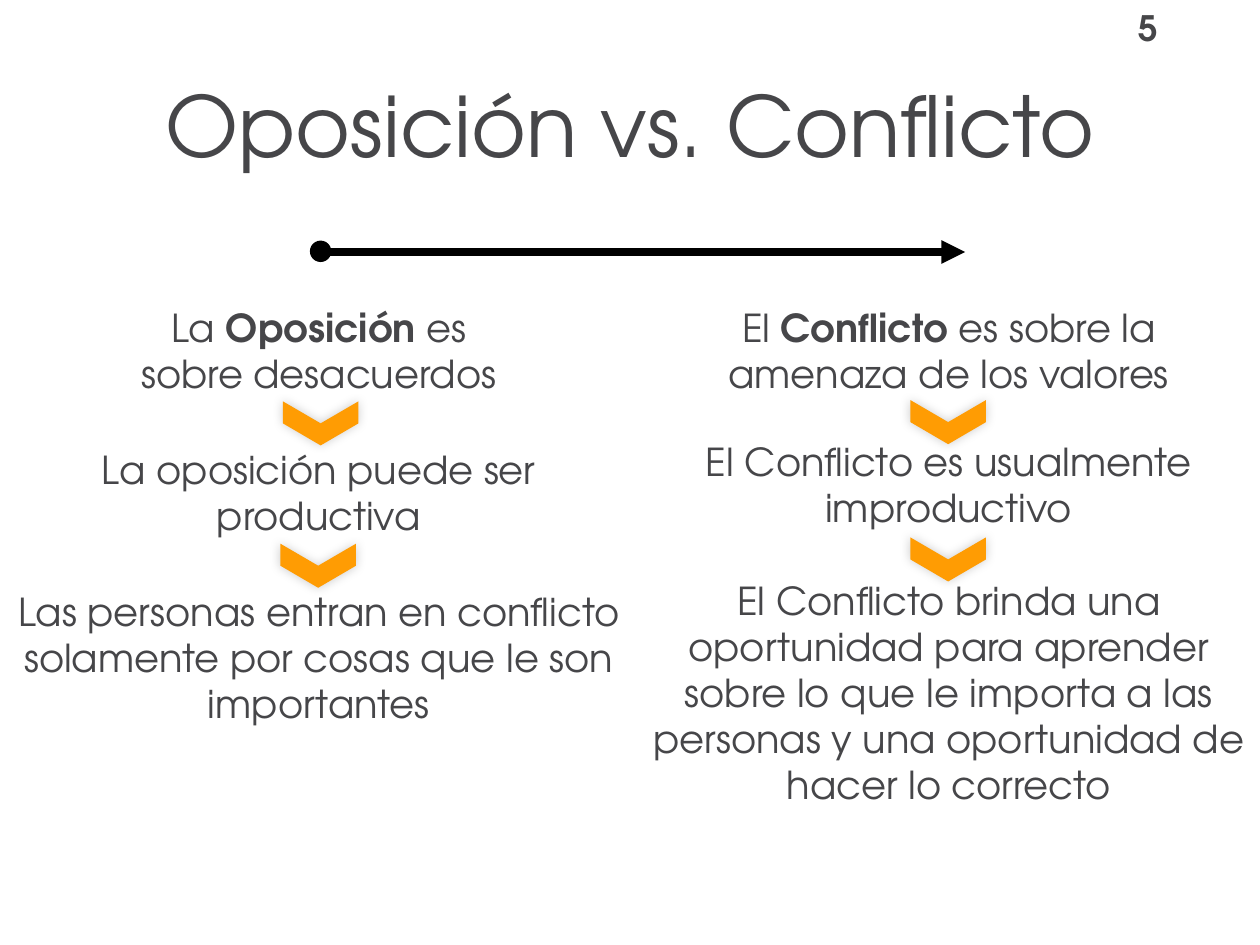
from lxml import etree
from pptx import Presentation
from pptx import util as u
from pptx.dml.color import RGBColor
from pptx.enum import shapes, text
from pptx.oxml import parse_xml
from pptx.oxml.ns import nsdecls, qn

PX = 9144  # 100 px to the inch
FONT = "TeX Gyre Adventor"
GREY = RGBColor(0x46, 0x46, 0x49)
BLACK = RGBColor(0, 0, 0)
ORANGE = RGBColor(0xFF, 0x9C, 0x03)
CENTER = text.PP_ALIGN.CENTER


def write(paragraph, content, size=22, bold=False, align=None, before=0, after=0):
    """Fill a paragraph; ** toggles bold and a newline breaks the line."""
    paragraph.alignment = align
    paragraph.space_before, paragraph.space_after = u.Pt(before), u.Pt(after)
    for index, part in enumerate(content.split("**")):
        for row, words in enumerate(part.split("\n")):
            if row:
                paragraph.add_line_break()
            run = paragraph.add_run()
            run.text = words
            run.font.name, run.font.size = FONT, u.Pt(size)
            run.font.bold = bold or index % 2 == 1
            run.font.color.rgb = GREY


class Deck:
    def __init__(self, width, height):
        self.presentation = Presentation()
        self.presentation.slide_width = width * PX
        self.presentation.slide_height = height * PX
        self.slide = self.presentation.slides.add_slide(self.presentation.slide_layouts[3])

    def place(self, shape, left, top, width, height):
        shape.left, shape.top = left * PX, top * PX
        shape.width, shape.height = width * PX, height * PX

    def title(self, content, *box):
        shape = self.slide.shapes.title
        self.place(shape, *box)
        shape.text_frame.auto_size = text.MSO_AUTO_SIZE.NONE
        shape.text_frame.vertical_anchor = text.MSO_ANCHOR.MIDDLE
        write(shape.text_frame.paragraphs[0], content, size=48, align=CENTER)

    def body(self, index, items, *box):
        """Items are (text, space before, space after)."""
        shape = self.slide.placeholders[index]
        self.place(shape, *box)
        frame = shape.text_frame
        frame.auto_size = text.MSO_AUTO_SIZE.NONE
        for row, (content, before, after) in enumerate(items):
            paragraph = frame.add_paragraph() if row else frame.paragraphs[0]
            properties = paragraph._p.get_or_add_pPr()
            properties.set("marL", "0")
            properties.set("indent", "0")
            etree.SubElement(properties, qn("a:buNone"))
            write(paragraph, content, align=CENTER, before=before, after=after)

    def label(self, content, *box, **style):
        shape = self.slide.shapes.add_textbox(*(value * PX for value in box))
        shape.text_frame.word_wrap = True
        write(shape.text_frame.paragraphs[0], content, **style)

    def shape(self, kind, color, *box):
        shape = self.slide.shapes.add_shape(kind, *(value * PX for value in box))
        shape.shadow.inherit = False
        shape.fill.solid()
        shape.fill.fore_color.rgb = color
        shape.line.fill.background()
        return shape

    def chevron(self, center_x, center_y, width=35, height=60):
        shape = self.shape(shapes.MSO_SHAPE.CHEVRON, ORANGE,
                           center_x - width // 2, center_y - height // 2, width, height)
        shape.rotation = 90
        shape._element.spPr.find(qn("a:effectLst")).append(parse_xml(
            f'<a:outerShdw {nsdecls("a")} blurRad="{u.Pt(6)}" dist="0" dir="13500000">'
            '<a:srgbClr val="000000"><a:alpha val="20000"/></a:srgbClr></a:outerShdw>'))

    def arrow(self, *ends):
        line = self.slide.shapes.add_connector(
            shapes.MSO_CONNECTOR.STRAIGHT, *(value * PX for value in ends))
        line.line.color.rgb = BLACK
        line.line.width = u.Pt(4.5)
        etree.SubElement(line.line._get_or_add_ln(), qn("a:tailEnd"), type="triangle")
        etree.SubElement(line._element.spPr, qn("a:effectLst"))


def main():
    deck = Deck(1000, 750)

    # Slide number and title
    deck.label("5", 894, 0, 94, 44, size=20, bold=True)
    deck.title("Oposición vs. Conflicto", 101, 5, 798, 186)

    # Two columns
    deck.body(1, [
        ("La **Oposición** es\nsobre desacuerdos", 0, 24),
        ("La oposición puede ser productiva", 4.4, 24),
        ("Las personas entran en conflicto solamente por cosas que le son importantes", 4.4, 24),
    ], 0, 236, 506, 424)
    deck.body(2, [
        ("El **Conflicto** es sobre la amenaza de los valores", 0, 24),
        ("El Conflicto es usualmente", 0, 0),
        ("improductivo", 0, 0),
        ("El Conflicto brinda una oportunidad para aprender sobre lo que le importa "
         "a las personas y una oportunidad de hacer lo correcto", 26.4, 0),
    ], 506, 236, 494, 503)

    # Arrow from opposition to conflict
    deck.shape(shapes.MSO_SHAPE.OVAL, BLACK, 246, 191, 17, 17)
    deck.arrow(255, 200, 766, 200)

    # Chevrons between the statements
    for center in ((254, 336), (752, 335), (252, 449), (752, 444)):
        deck.chevron(*center)

    deck.presentation.save("out.pptx")


if __name__ == "__main__":
    main()
